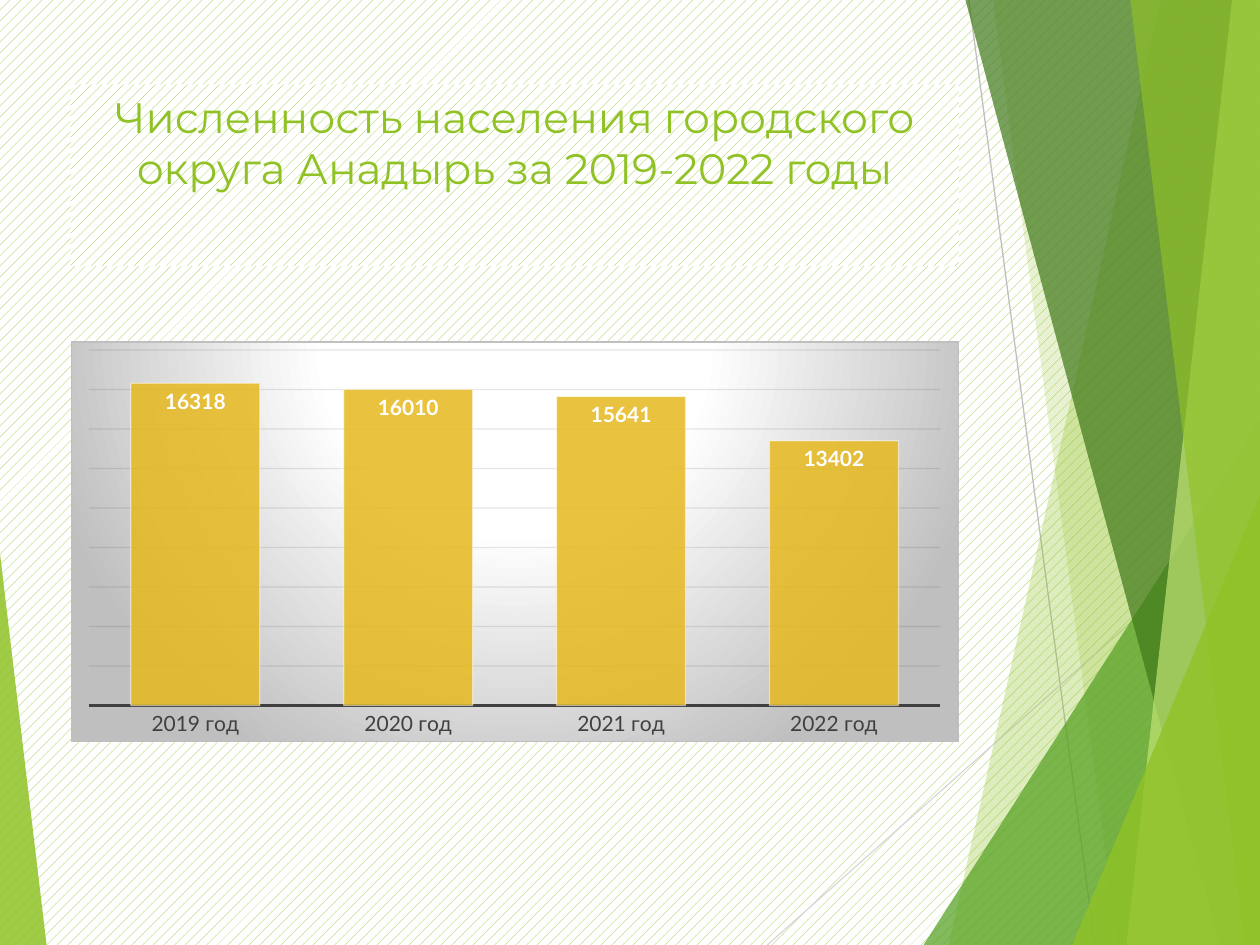
from lxml import etree
from pptx import Presentation
from pptx.chart.data import CategoryChartData
from pptx.dml.color import RGBColor
from pptx.enum import chart as ch, dml, shapes, text
from pptx.oxml import parse_xml
from pptx.oxml.ns import nsdecls, qn
from pptx.util import Inches, Pt

TITLE = "Численность населения городского округа Анадырь за 2019-2022 годы"
PEOPLE = {"2019 год": 16318, "2020 год": 16010, "2021 год": 15641, "2022 год": 13402}
GREEN, WHITE, GREY = "90C226", "FFFFFF", "BFBFBF"
LEFT, WIDE = 0.56, 7.05

LINES = [((7.69, 0), (8.69, 7.5), GREY), ((10, 4.03), (6.09, 7.5), "D9D9D9")]
# Bands reach the right edge: top x, bottom x, colour, opacity
# Wedges are right triangles: left, top, width, apex, colour, opacity
DECOR = [
    ("band", 9.21, 7.53, GREEN, 30),
    ("band", 7.88, 8.87, GREEN, 20),
    ("wedge", 7.33, 3.33, 2.67, 1, "54A021", 72),
    ("band", 7.66, 9.68, "3F7819", 70),
    ("band", 9.78, 8.94, "C0E474", 70),
    ("band", 8.97, 9.88, GREEN, 65),
    ("wedge", 8.51, 3.93, 1.49, 1, GREEN, 80),
    ("wedge", 0, 4.39, 0.37, 0, GREEN, 85),
]


def rgb(code):
    return RGBColor.from_string(code)


def fade(fmt, pct):
    """Make a solid fill partly transparent."""
    node = next(fmt._xPr.iter(qn("a:srgbClr")))
    etree.SubElement(node, qn("a:alpha"), val=str(pct * 1000))


def paint(fill, code, pct=100):
    fill.solid()
    fill.fore_color.rgb = rgb(code)
    if pct < 100:
        fade(fill, pct)


def stroke(line, code, width, pct=100):
    paint(line.fill, code, pct)
    line.width = Pt(width)


def hatch(fill):
    fill.patterned()
    fill.pattern = dml.MSO_PATTERN.PERCENT_20
    fill.fore_color.rgb = rgb(GREEN)
    fill.back_color.rgb = rgb(WHITE)


def style(font, code, **props):
    font.color.rgb = rgb(code)
    for key, val in props.items():
        setattr(font, key, val)


def band(tree, top, foot, code, pct):
    pen = tree.build_freeform(Inches(top), Inches(-0.01))
    pen.add_line_segments([(Inches(x), Inches(y)) for x, y in
                           ((10, -0.01), (10, 7.5), (foot, 7.5))], close=True)
    finish(pen.convert_to_shape(), code, pct)


def wedge(tree, x, y, wide, apex, code, pct):
    tri = tree.add_shape(shapes.MSO_SHAPE.ISOSCELES_TRIANGLE,
                         Inches(x), Inches(y), Inches(wide), Inches(7.5 - y))
    tri.adjustments[0] = apex
    finish(tri, code, pct)


def finish(shape, code, pct):
    shape.shadow.inherit = False
    paint(shape.fill, code, pct)
    shape.line.fill.background()


def decorate(tree):
    for start, end, code in LINES:
        line = tree.add_connector(shapes.MSO_CONNECTOR.STRAIGHT,
                                  *map(Inches, start + end))
        stroke(line.line, code, 0.75)
        etree.SubElement(line._element.spPr, qn("a:effectLst"))
    draw = {"band": band, "wedge": wedge}
    for kind, *args in DECOR:
        draw[kind](tree, *args)


def add_title(slide):
    title = slide.shapes.title
    title.left, title.top, title.width, title.height = map(
        Inches, (LEFT, 0.67, WIDE, 1.44))
    hatch(title.fill)
    frame = title.text_frame
    frame.text = TITLE
    frame.word_wrap = True
    frame.auto_size = text.MSO_AUTO_SIZE.NONE
    frame.vertical_anchor = text.MSO_ANCHOR.TOP
    para = frame.paragraphs[0]
    para.alignment = text.PP_ALIGN.CENTER
    style(para.runs[0].font, GREEN, size=Pt(24.3), name="Montserrat")


def back(chart):
    """Give the chart area its round gradient and border, and fix the plot."""
    stops = "".join(f'<a:gs pos="{pos}000"><a:srgbClr val="{code}"/></a:gs>'
                    for pos, code in ((0, WHITE), (39, WHITE), (100, GREY)))
    area = chart._chartSpace.find(qn("c:chart"))
    area.addnext(parse_xml(
        f'<c:spPr {nsdecls("c", "a")}><a:gradFill><a:gsLst>{stops}</a:gsLst>'
        '<a:path path="circle"><a:fillToRect l="50000" t="-80000" r="50000"'
        ' b="180000"/></a:path></a:gradFill><a:ln w="9525"><a:solidFill>'
        f'<a:srgbClr val="{GREY}"/></a:solidFill></a:ln></c:spPr>'))
    plot = area.find(qn("c:plotArea"))
    for old in plot.findall(qn("c:layout")):
        plot.remove(old)
    sides = "".join(f'<c:{key} val="{val}"/>' for key, val in (
        ("layoutTarget", "inner"), ("xMode", "edge"), ("yMode", "edge"),
        ("x", 0.02), ("y", 0.02), ("w", 0.96), ("h", 0.89)))
    plot.insert(0, parse_xml(f'<c:layout {nsdecls("c")}><c:manualLayout>{sides}'
                             '</c:manualLayout></c:layout>'))


def add_bars(tree):
    data = CategoryChartData()
    data.categories = list(PEOPLE)
    data.add_series("Series 1", list(PEOPLE.values()))
    chart = tree.add_chart(ch.XL_CHART_TYPE.COLUMN_CLUSTERED,
                           *map(Inches, (LEFT, 2.71, WIDE, 3.18)), data).chart
    chart.has_legend = chart.has_title = False
    style(chart.font, "000000", size=Pt(10), name="Lato")
    back(chart)

    years = chart.category_axis
    years.major_tick_mark = ch.XL_TICK_MARK.NONE
    style(years.tick_labels.font, "404040", size=Pt(12), name="Lato")
    stroke(years.format.line, "404040", 1.5)

    scale = chart.value_axis
    for key, val in dict(visible=False, minimum_scale=0, maximum_scale=18000,
                         major_unit=2000, has_major_gridlines=True).items():
        setattr(scale, key, val)
    stroke(scale.major_gridlines.format.line, "0D0D0D", 0.75, 10)

    plot = chart.plots[0]
    plot.gap_width = 65
    plot.vary_by_categories = False
    bars = plot.series[0]
    paint(bars.format.fill, "E6B91E", 85)
    stroke(bars.format.line, WHITE, 0.75, 50)
    labels = bars.data_labels
    labels.show_value = True
    labels.position = ch.XL_LABEL_POSITION.INSIDE_END
    style(labels.font, WHITE, size=Pt(12), bold=True, name="Lato")


def main():
    deck = Presentation()
    deck.slide_width, deck.slide_height = Inches(10), Inches(7.5)
    slide = deck.slides.add_slide(deck.slide_layouts[5])
    hatch(slide.background.fill)
    decorate(slide.shapes)
    add_title(slide)
    add_bars(slide.shapes)
    deck.save("out.pptx")


if __name__ == "__main__":
    main()
